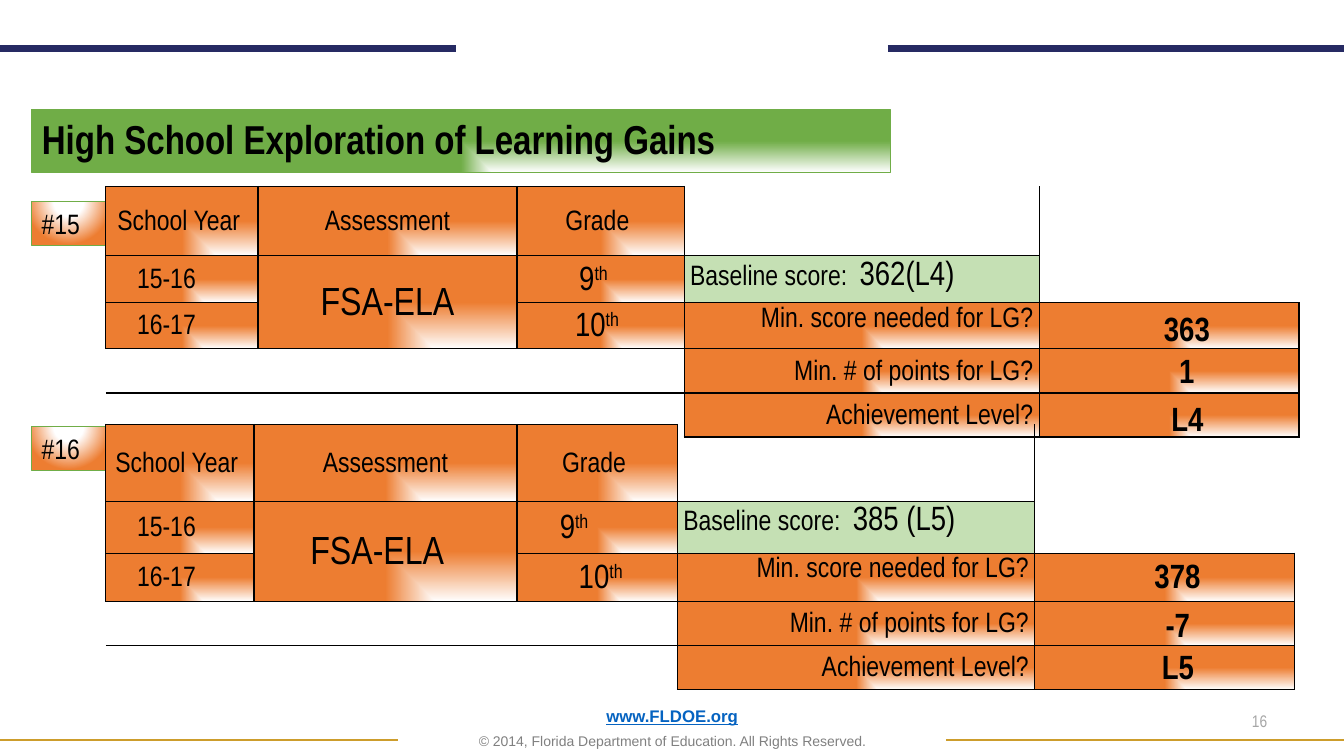
import pptx
import pptx.util
import pptx.dml.color
import pptx.enum.shapes
import pptx.enum.text
import pptx.oxml
import pptx.oxml.ns
import lxml.etree

Pt = pptx.util.Pt
RGB = pptx.dml.color.RGBColor.from_string
qn = pptx.oxml.ns.qn
ALIGN = pptx.enum.text.PP_ALIGN
ANCHOR = pptx.enum.text.MSO_ANCHOR
RECT = pptx.enum.shapes.MSO_SHAPE.RECTANGLE
STRAIGHT = pptx.enum.shapes.MSO_CONNECTOR.STRAIGHT

THEME = {
    "black": "000000", "white": "FFFFFF", "orange": "ED7D31", "green": "70AD47",
    "pale": "C5E0B4", "navy": "262A63", "gold": "CD9D2C", "link": "0563C1",
    "gray": "808080", "number": "A6A6A6",
    "title": 28.8, "subject": 28, "value": 24, "body": 20, "small": 12, "fine": 10,
    "font": "Arial Narrow", "footer_font": "Arial",
}


def write(p, text, size, color="black", font="font", **extra):
    r = p.add_run()
    r.text = text
    fmt = {"name": THEME[font], "size": Pt(THEME[size]), **extra}
    for name, value in fmt.items():
        setattr(r.font, name, value)
    r.font.color.rgb = RGB(THEME[color])
    return r


def shade(owner, props, color, path="rect", white_until=0, focus=(100, 100, 0, 0)):
    owner.fill.gradient()
    grad = props.find(qn("a:gradFill"))
    for child in list(grad):
        grad.remove(child)
    stops = lxml.etree.SubElement(grad, qn("a:gsLst"))
    for pos, key in ((0, "white"), (white_until, "white"), (100, color)):
        stop = lxml.etree.SubElement(stops, qn("a:gs"), pos=str(pos * 1000))
        lxml.etree.SubElement(stop, qn("a:srgbClr"), val=THEME[key])
    shape_path = lxml.etree.SubElement(grad, qn("a:path"), path=path)
    sides = {k: str(v * 1000) for k, v in zip("ltrb", focus)}
    lxml.etree.SubElement(shape_path, qn("a:fillToRect"), **sides)


prs = pptx.Presentation()
prs.slide_width, prs.slide_height = Pt(960), Pt(540)
s = prs.slides.add_slide(prs.slide_layouts[5])

# Rules at the top and bottom
for x1, x2, y, color, width in (
    (0, 284.4, 528.5, "gold", 1), (0, 325.7, 34.5, "navy", 5),
    (634.3, 960, 34.5, "navy", 5), (675.9, 960, 528.5, "gold", 1),
):
    ln = s.shapes.add_connector(STRAIGHT, Pt(x1), Pt(y), Pt(x2), Pt(y))
    ln.line.color.rgb = RGB(THEME[color])
    ln.line.width = Pt(width)
    lxml.etree.SubElement(ln._element.spPr, qn("a:effectLst"))

# Title
sp = s.shapes.title
sp.left, sp.top, sp.width, sp.height = Pt(22.7), Pt(78.4), Pt(613.4), Pt(44.8)
shade(sp, sp._element.spPr, "green")
sp.line.color.rgb = RGB(THEME["green"])
sp.line.width = Pt(0.5)
tf = sp.text_frame
tf.auto_size = pptx.enum.text.MSO_AUTO_SIZE.NONE
tf.vertical_anchor = ANCHOR.MIDDLE
p = tf.paragraphs[0]
p.alignment, p.line_spacing = ALIGN.LEFT, 0.9
write(p, "High School Exploration of Learning Gains", "title", bold=True)

# Example numbers
for text, top, width in (("#15", 144, 0.5), ("#16", 304.8, 0.75)):
    sp = s.shapes.add_shape(RECT, Pt(22.7), Pt(top), Pt(52.9), Pt(31.5))
    sp.shadow.inherit = False
    shade(sp, sp._element.spPr, "orange", "circle", 35, (50, -80, 50, 180))
    sp.line.color.rgb = RGB(THEME["green"])
    sp.line.width = Pt(width)
    p = sp.text_frame.paragraphs[0]
    p.alignment = ALIGN.LEFT
    write(p, text, "body")

# Score tables; pads are extra left and right cell margins
examples = (
    {"top": 133.2, "cols": (108.7, 185, 119.4, 253.7, 185.5),
     "rows": (49.5, 33.5, 33, 31.5, 31.5), "score": "362(L4)",
     "subject": (ALIGN.CENTER, 0), "ninth": (0, 10), "tenth": (0, 5)},
    {"top": 303.1, "cols": (105.8, 187.9, 114.6, 255.4, 185.5),
     "rows": (55, 37, 34.5, 31.5, 31.5), "score": "385 (L5)",
     "subject": (ALIGN.LEFT, 36), "ninth": (0, 33), "tenth": (5, 0)},
)
filled = {(r, c) for r in range(3) for c in range(3)}
filled |= {(1, 3)} | {(r, c) for r in (2, 3, 4) for c in (3, 4)}
edges = (("a:lnL", 0, -1), ("a:lnR", 0, 1), ("a:lnT", -1, 0), ("a:lnB", 1, 0))

for ex in examples:
    tbl = s.shapes.add_table(5, 5, Pt(75.6), Pt(ex["top"]),
                             Pt(sum(ex["cols"])), Pt(sum(ex["rows"]))).table
    tbl.first_row = tbl.horz_banding = False
    tbl._tbl.tblPr.find(qn("a:tableStyleId")).text = "{2D5ABB26-0587-4C30-8999-92F81FD0307C}"
    for col, width in zip(tbl.columns, ex["cols"]):
        col.width = Pt(width)
    for row, height in zip(tbl.rows, ex["rows"]):
        row.height = Pt(height)

    # Borders and fills
    for r in range(5):
        for c in range(5):
            cell = tbl.cell(r, c)
            tcPr = cell._tc.get_or_add_tcPr()
            for tag, dr, dc in edges:
                if filled & {(r, c), (r + dr, c + dc)}:
                    ln = lxml.etree.SubElement(tcPr, qn(tag), w="12700")
                    solid = lxml.etree.SubElement(ln, qn("a:solidFill"))
                    lxml.etree.SubElement(solid, qn("a:srgbClr"), val=THEME["black"])
            if (r, c) == (1, 3):
                cell.fill.solid()
                cell.fill.fore_color.rgb = RGB(THEME["pale"])
            elif (r, c) in filled:
                shade(cell, tcPr, "orange")
            else:
                cell.fill.background()
    tbl.cell(1, 1).merge(tbl.cell(2, 1))
    for r in (3, 4):
        tbl.cell(r, 0).merge(tbl.cell(r, 2))

    # Cell text: row, column, text, size, alignment, pads
    subject_align, subject_pad = ex["subject"]
    for r, c, text, size, align, pads in (
        (0, 0, "School Year", "body", ALIGN.CENTER, (0, 4.5)),
        (0, 1, "Assessment", "body", ALIGN.CENTER, (0, 0)),
        (0, 2, "Grade", "body", ALIGN.CENTER, (0, 4.5)),
        (1, 0, "15-16", "body", ALIGN.LEFT, (18, 0)),
        (2, 0, "16-17", "body", ALIGN.LEFT, (18, 0)),
        (1, 1, "FSA-ELA", "subject", subject_align, (subject_pad, 0)),
        (1, 2, "9", "value", ALIGN.CENTER, ex["ninth"]),
        (2, 2, "10", "value", ALIGN.CENTER, ex["tenth"]),
        (1, 3, "Baseline score:", "body", ALIGN.LEFT, (0, 0)),
        (2, 3, "Min. score needed for LG?", "body", ALIGN.RIGHT, (0, 0)),
        (3, 3, "Min. # of points for LG?", "body", ALIGN.RIGHT, (0, 0)),
        (4, 3, "Achievement Level?", "body", ALIGN.RIGHT, (0, 0)),
    ):
        cell = tbl.cell(r, c)
        cell.margin_left, cell.margin_right = Pt(4.3 + pads[0]), Pt(4.3 + pads[1])
        cell.margin_top = cell.margin_bottom = 0
        top_aligned = c == 3 and r < 3
        cell.vertical_anchor = ANCHOR.TOP if top_aligned else ANCHOR.MIDDLE
        p = cell.text_frame.paragraphs[0]
        p.alignment, p.line_spacing = align, 1.15
        write(p, text, size)
        if (r, c) == (1, 3):
            tabs = lxml.etree.SubElement(p._p.get_or_add_pPr(), qn("a:tabLst"))
            lxml.etree.SubElement(tabs, qn("a:tab"), pos=str(Pt(121)), algn="l")
            write(p, "\t" + ex["score"], "value")
        elif c == 2 and r > 0:
            write(p, "th", "value").font._element.set("baseline", "30000")

# Answers, footer and slide number
centre = {"align": ALIGN.CENTER, "anchor": ANCHOR.TOP}
answer = ("value", "black", "font", {"bold": True})
boxes = [
    (x, y, w, 36, centre, [(text, *answer)])
    for text, x, y, w in (
        ("363", 807.1, 216.7, 81.4), ("1", 807.1, 246.2, 81.4), ("L4", 812.9, 280.8, 70.6),
        ("378", 805.7, 393.1, 70.6), ("-7", 800.6, 427.7, 81.4), ("L5", 808.6, 457.9, 65.5),
    )
]
boxes += [
    (66.2, 508.3, 828, 31, {"align": ALIGN.CENTER, "anchor": ANCHOR.BOTTOM, "spacing": 0.9}, [
        ("www.FLDOE.org", "small", "link", "footer_font", {"bold": True, "underline": True}),
        ("© 2014, Florida Department of Education. All Rights Reserved.",
         "fine", "gray", "footer_font", {}),
    ]),
    (688.3, 500.4, 223.9, 28.8, {"align": ALIGN.RIGHT, "anchor": ANCHOR.MIDDLE},
     [("16", "small", "number", "font", {})]),
]
for x, y, w, h, layout, lines in boxes:
    tf = s.shapes.add_textbox(Pt(x), Pt(y), Pt(w), Pt(h)).text_frame
    tf.word_wrap = True
    tf.vertical_anchor = layout["anchor"]
    for i, (text, size, color, font, extra) in enumerate(lines):
        p = tf.add_paragraph() if i else tf.paragraphs[0]
        p.alignment = layout["align"]
        p.line_spacing = layout.get("spacing", 1.0)
        p.space_before = Pt(6 if i else 0)
        write(p, text, size, color, font, **extra)

prs.save("out.pptx")
